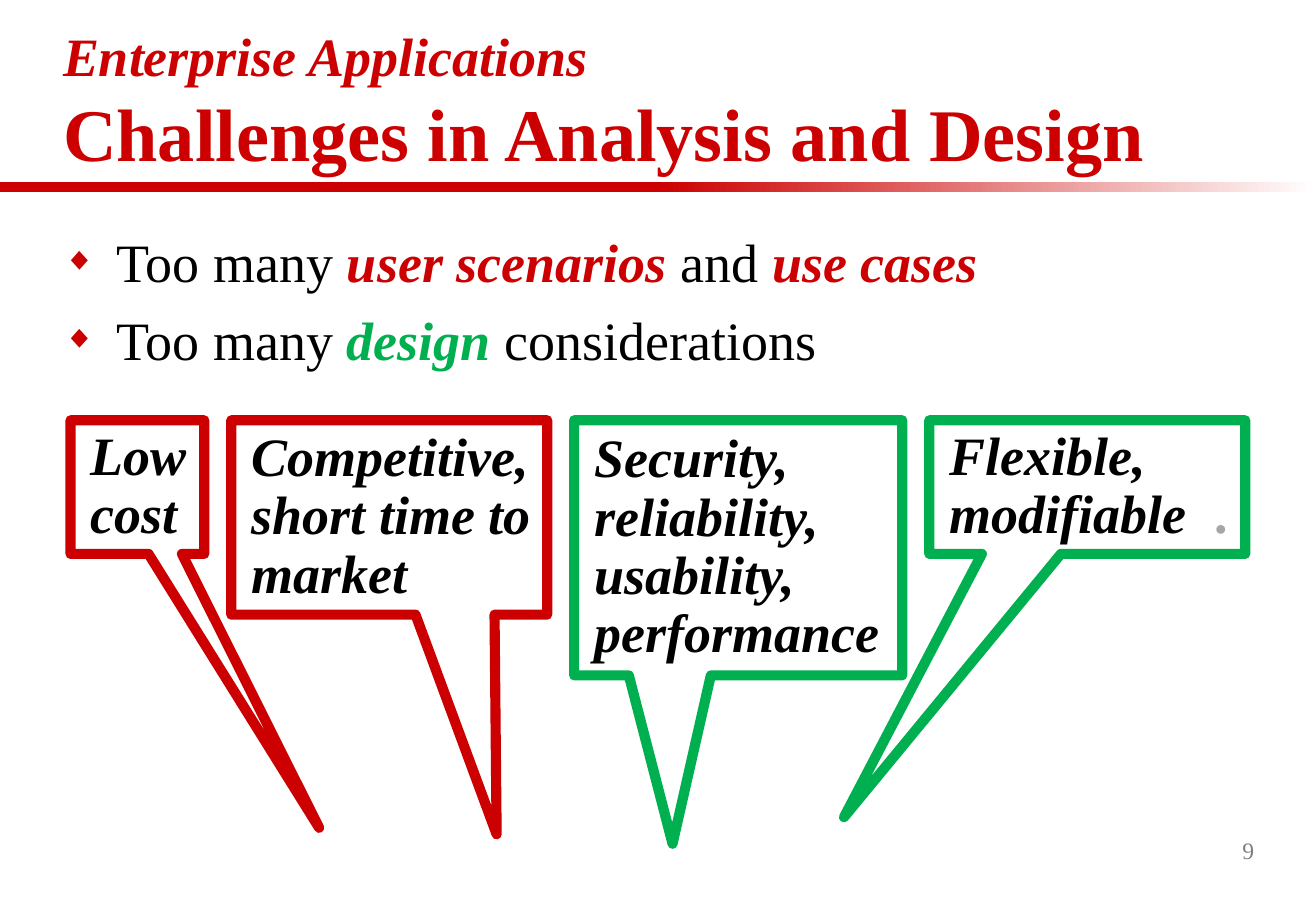
from lxml import etree
from pptx import Presentation
from pptx import util as u
from pptx.dml.color import RGBColor
from pptx.enum import shapes, text
from pptx.oxml.ns import qn

RED, GREEN, BLACK, WHITE = "CC0000", "00B050", "000000", "FFFFFF"
GREY, PALE_GREY = "808080", "A6A6A6"


def colour(code):
    return RGBColor.from_string(code)


class Page:
    """A slide whose lengths are given in percent of its width and height."""

    font = "Times New Roman"
    size = 32

    def __init__(self, deck):
        self.width, self.height = deck.slide_width, deck.slide_height
        self.shapes = deck.slides.add_slide(deck.slide_layouts[6]).shapes

    def area(self, left, top, width, height):
        return (int(left * self.width / 100), int(top * self.height / 100),
                int(width * self.width / 100), int(height * self.height / 100))

    def box(self, area, anchor=text.MSO_ANCHOR.TOP):
        frame = self.shapes.add_textbox(*self.area(*area)).text_frame
        frame.word_wrap = True
        frame.vertical_anchor = anchor
        return frame

    def span(self, para, words, code=BLACK, size=None, bold=False, italic=False):
        run = para.add_run()
        run.text = words
        run.font.name, run.font.size = self.font, u.Pt(size or self.size)
        run.font.bold, run.font.italic = bold, italic
        run.font.color.rgb = colour(code)

    def shape(self, kind, area, fill):
        shape = self.shapes.add_shape(kind, *self.area(*area))
        shape.shadow.inherit = False
        shape.fill.solid()
        shape.fill.fore_color.rgb = colour(fill)
        shape.line.fill.background()
        return shape

    def bar(self, area, start, end=None):
        """Draw a plain bar, or one that fades from start to end."""
        bar = self.shape(shapes.MSO_SHAPE.RECTANGLE, area, start)
        if end:
            bar.fill.gradient()
            bar.fill.gradient_angle = 0
            for stop, code in zip(bar.fill.gradient_stops, (start, end)):
                stop.color.rgb = colour(code)

    def bullet(self, para):
        para.space_before = u.Pt(7.7)
        props = para._p.get_or_add_pPr()
        props.set("marL", str(u.Inches(0.44)))
        props.set("indent", str(-u.Inches(0.44)))
        tint = etree.SubElement(props, qn("a:buClr"))
        etree.SubElement(tint, qn("a:srgbClr"), val=RED)
        etree.SubElement(props, qn("a:buSzPct"), val="60000")
        etree.SubElement(props, qn("a:buFont"), typeface=self.font)
        etree.SubElement(props, qn("a:buChar"), char="◆")

    def callout(self, area, tip, outline, words):
        callout = self.shape(shapes.MSO_SHAPE.RECTANGULAR_CALLOUT, area, WHITE)
        callout.adjustments[0], callout.adjustments[1] = tip
        callout.line.color.rgb = colour(outline)
        callout.line.width = u.Pt(6)
        frame = callout.text_frame
        frame.word_wrap = True
        frame.vertical_anchor = text.MSO_ANCHOR.MIDDLE
        para = frame.paragraphs[0]
        para.alignment = text.PP_ALIGN.LEFT
        para.line_spacing = 0.9
        para._p.get_or_add_pPr().set("marL", str(u.Inches(0.07)))
        self.span(para, words, bold=True, italic=True)
        return para


def main():
    deck = Presentation()
    deck.slide_width, deck.slide_height = u.Inches(10.83), u.Inches(7.5)
    page = Page(deck)

    page.bar((0, 20, 50, 1.07), RED)
    page.bar((50, 20, 50, 1.07), RED, WHITE)

    title = page.box((3.88, 3.87, 92.34, 16.13), text.MSO_ANCHOR.BOTTOM).paragraphs[0]
    page.span(title, "Enterprise Applications", RED, bold=True, italic=True)
    title.add_line_break()
    page.span(title, "Challenges in Analysis and Design", RED, size=44, bold=True)

    points = [
        [("Too many ", None), ("user scenarios", RED), (" and ", None), ("use cases", RED)],
        [("Too many ", None), ("design", GREEN), (" considerations", None)],
    ]
    body = page.box((3.88, 24.4, 92.34, 19.47))
    for index, point in enumerate(points):
        para = body.add_paragraph() if index else body.paragraphs[0]
        page.bullet(para)
        for words, accent in point:
            page.span(para, words, accent or BLACK, bold=bool(accent), italic=bool(accent))

    number = page.box((75.35, 90, 20.87, 6.67), text.MSO_ANCHOR.MIDDLE).paragraphs[0]
    number.alignment = text.PP_ALIGN.RIGHT
    page.span(number, "9", GREY, size=14)

    # width, lines of text, tip, outline, words
    challenges = [
        (10.16, 2, (1.36, 2.55), RED, "Low cost"),
        (24.01, 3, (0.34, 1.63), RED, "Competitive, short time to market"),
        (24.93, 4, (-0.2, 1.16), GREEN, "Security, reliability, usability, performance"),
        (24.01, 2, (-0.77, 2.47), GREEN, "Flexible, modifiable  "),
    ]
    left, gap = 5.36, 2.05
    for width, lines, tip, outline, words in challenges:
        area = (left, 46.13, width, 1.33 + 6.67 * lines)
        last = page.callout(area, tip, outline, words)
        left += width + gap
    page.span(last, ".", PALE_GREY, bold=True)

    deck.save("out.pptx")


if __name__ == "__main__":
    main()
